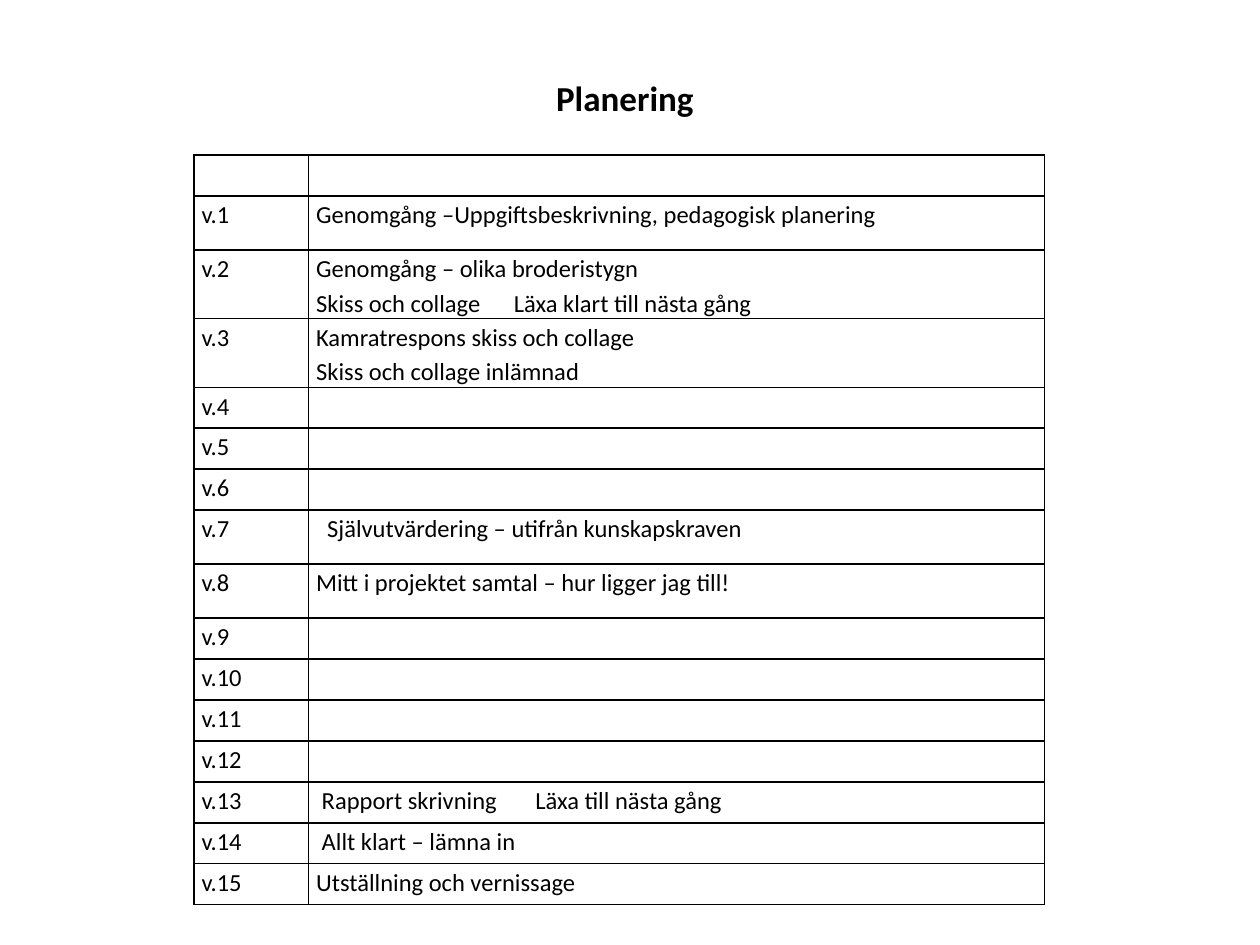
from lxml import etree
from pptx import Presentation
from pptx.dml.color import RGBColor
from pptx.enum.text import MSO_ANCHOR, PP_ALIGN
from pptx.oxml.ns import qn
from pptx.util import Pt

FONT = "Calibri"
BLACK = "000000"
COLUMN_WIDTHS = (65.5, 420.5)
ROW_HEIGHT = 23.4
SINGLE_TALL, DOUBLE_TALL = 30.9, 39.1
CELL_MARGIN = 4.3

# Week number: (paragraphs, row height, extra indent, tab stop)
ACTIVITIES = {
    1: (["Genomgång –Uppgiftsbeskrivning, pedagogisk planering"], SINGLE_TALL, 0, None),
    2: (["Genomgång – olika broderistygn",
         "Skiss och collage\tLäxa klart till nästa gång"], DOUBLE_TALL, 0, 113),
    3: (["Kamratrespons skiss och collage\nSkiss och collage inlämnad"], DOUBLE_TALL, 0, None),
    7: (["Självutvärdering – utifrån kunskapskraven"], SINGLE_TALL, 6.3, None),
    8: (["Mitt i projektet samtal – hur ligger jag till!"], SINGLE_TALL, 0, None),
    13: (["Rapport skrivning\tLäxa till nästa gång"], ROW_HEIGHT, 3.2, 122),
    14: (["Allt klart – lämna in"], ROW_HEIGHT, 3.2, None),
    15: (["Utställning och vernissage"], ROW_HEIGHT, 0, None),
}
NO_ACTIVITY = ([], ROW_HEIGHT, 0, None)
LAST_WEEK = 15


def color(hex_string):
    return RGBColor.from_string(hex_string)


def add_run(paragraph, text, size, bold=False):
    run = paragraph.add_run()
    run.text = text
    run.font.name = FONT
    run.font.size = Pt(size)
    run.font.bold = bold
    run.font.color.rgb = color(BLACK)


def add_tab_stop(paragraph, position):
    properties = paragraph._p.get_or_add_pPr()
    tabs = etree.SubElement(properties, qn("a:tabLst"))
    etree.SubElement(tabs, qn("a:tab"), pos=str(Pt(position)), algn="l")


def set_borders(cell, hex_string, width):
    properties = cell._tc.get_or_add_tcPr()
    for index, side in enumerate(("lnL", "lnR", "lnT", "lnB")):
        line = etree.Element(qn(f"a:{side}"), w=str(Pt(width)))
        fill = etree.SubElement(line, qn("a:solidFill"))
        etree.SubElement(fill, qn("a:srgbClr"), val=hex_string)
        properties.insert(index, line)


def format_cell(cell, indent=0):
    cell.margin_left = Pt(CELL_MARGIN + indent)
    cell.margin_right = Pt(CELL_MARGIN)
    cell.margin_top = cell.margin_bottom = Pt(0)
    cell.fill.background()
    set_borders(cell, BLACK, 1)


def fill_cell(cell, texts, tab_stop=None):
    frame = cell.text_frame
    for index, text in enumerate(texts):
        paragraph = frame.add_paragraph() if index else frame.paragraphs[0]
        paragraph.line_spacing = 1.15
        if "\t" in text:
            add_tab_stop(paragraph, tab_stop)
        for line_index, line in enumerate(text.split("\n")):
            if line_index:
                paragraph.add_line_break()
            add_run(paragraph, line, 14)


def add_title(slide, left, top, width, height):
    title = slide.shapes.title
    title.left, title.top = Pt(left), Pt(top)
    title.width, title.height = Pt(width), Pt(height)
    frame = title.text_frame
    frame.vertical_anchor = MSO_ANCHOR.MIDDLE
    paragraph = frame.paragraphs[0]
    paragraph.alignment = PP_ALIGN.CENTER
    add_run(paragraph, "Planering", 20, bold=True)


def add_schedule(slide, left, top):
    row_count = LAST_WEEK + 1
    shape = slide.shapes.add_table(
        row_count, len(COLUMN_WIDTHS), Pt(left), Pt(top),
        Pt(sum(COLUMN_WIDTHS)), Pt(ROW_HEIGHT * row_count))
    table = shape.table
    table.first_row = table.horz_banding = False
    for column, width in zip(table.columns, COLUMN_WIDTHS):
        column.width = Pt(width)
    for week in range(row_count):
        texts, height, indent, tab_stop = ACTIVITIES.get(week, NO_ACTIVITY)
        table.rows[week].height = Pt(height)
        week_cell, activity_cell = table.cell(week, 0), table.cell(week, 1)
        format_cell(week_cell)
        format_cell(activity_cell, indent)
        if week:
            fill_cell(week_cell, [f"v.{week}"])
        fill_cell(activity_cell, texts, tab_stop)


def main():
    presentation = Presentation()
    presentation.slide_width, presentation.slide_height = Pt(720), Pt(540)
    slide = presentation.slides.add_slide(presentation.slide_layouts[5])
    add_schedule(slide, 110.9, 88.6)
    add_title(slide, 127.4, 39.6, 459.4, 31.7)
    presentation.save("out.pptx")


if __name__ == "__main__":
    main()
